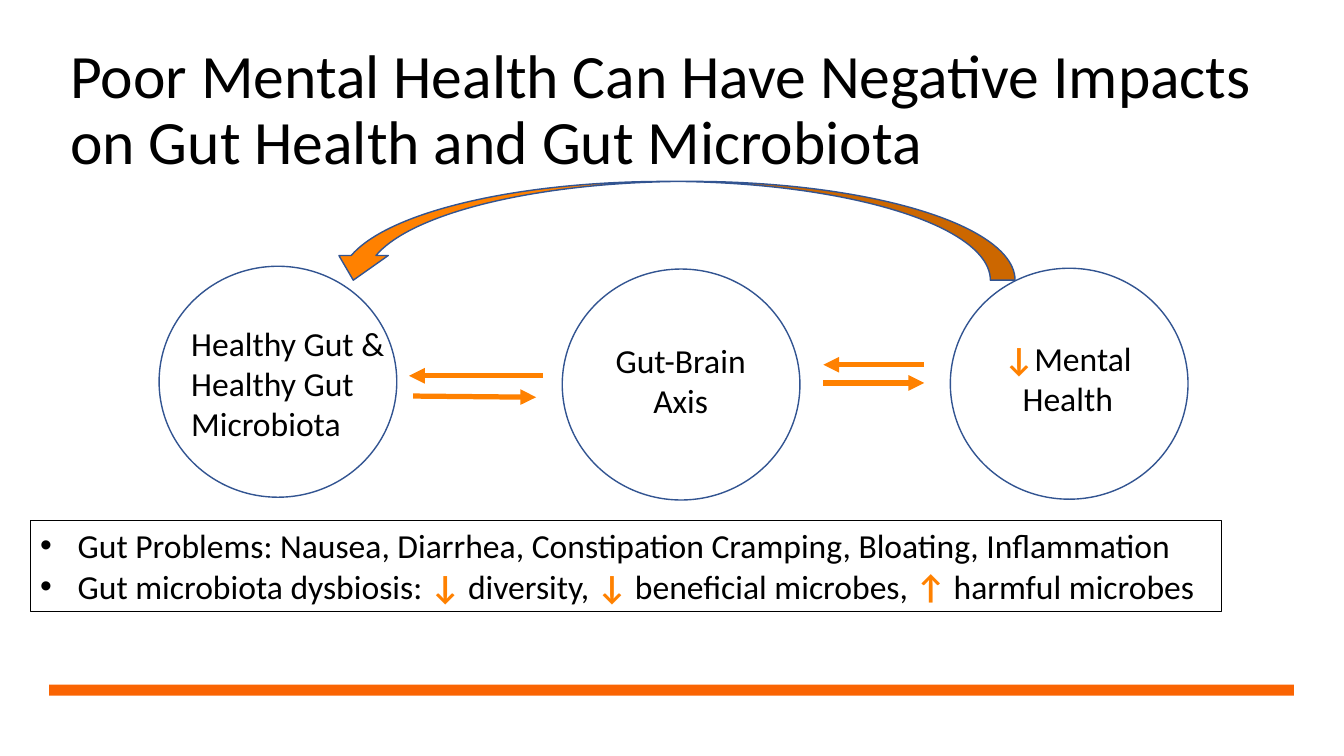
from dataclasses import dataclass

from lxml.etree import SubElement
from pptx import Presentation
from pptx.dml.color import RGBColor
from pptx.enum.shapes import MSO_CONNECTOR as Connector, MSO_SHAPE as Shape
from pptx.enum.text import MSO_ANCHOR as Anchor, PP_ALIGN as Align
from pptx.oxml.ns import qn
from pptx.util import Cm, Pt


@dataclass(frozen=True)
class Theme:
    font: str = "Calibri"
    title_size: float = 44
    body_size: float = 24
    ink: str = "000000"
    accent: str = "FF8100"
    bar: str = "FA6402"
    outline: str = "325491"
    thin: float = 0.75
    normal: float = 1
    thick: float = 3.75


@dataclass(frozen=True)
class Area:
    left: float
    top: float
    width: float
    height: float

    def lengths(self) -> list:
        return [Cm(n) for n in (self.left, self.top, self.width, self.height)]


@dataclass(frozen=True)
class Stage:
    left: float
    top: float
    label: Area
    lines: tuple
    align: Align = Align.CENTER


@dataclass(frozen=True)
class Arrow:
    start: tuple
    end: tuple


THEME = Theme()
CIRCLE_WIDTH, CIRCLE_HEIGHT = 5.99, 5.82
BULLET_INDENT = Cm(0.95)
MARKERS = "↓↑"

STAGES = (
    Stage(23.95, 6.76, Area(24.18, 8.38, 5.46, 2.31), (("↓", "Mental"), ("Health",))),
    Stage(14.17, 6.78, Area(14.88, 8.43, 4.55, 2.31), (("Gut-Brain Axis",),)),
    Stage(4.01, 6.71, Area(4.57, 8, 5.46, 3.33),
          (("Healthy Gut & Healthy Gut Microbiota",),), Align.LEFT),
)
ARROWS = (
    Arrow((20.75, 9.65), (23.29, 9.65)),
    Arrow((23.29, 9.19), (20.75, 9.19)),
    Arrow((10.41, 9.98), (13.51, 10.01)),
    Arrow((13.69, 9.47), (10.31, 9.47)),
)
EFFECTS = (
    ("Gut Problems: Nausea, Diarrhea, Constipation Cramping, Bloating, Inflammation",),
    ("Gut microbiota dysbiosis: ", "↓ ", "diversity,", " ↓",
     " beneficial microbes, ", "↑ ", "harmful microbes"),
)


def add_bullet(para) -> None:
    properties = para._p.get_or_add_pPr()
    properties.set("marL", str(BULLET_INDENT))
    properties.set("indent", str(-BULLET_INDENT))
    SubElement(properties, qn("a:buFont"), typeface="Arial")
    SubElement(properties, qn("a:buChar"), char="•")


def write(box, lines: tuple, *, size: float = THEME.body_size, align: Align = Align.LEFT,
          anchor: Anchor = Anchor.TOP, bullet: bool = False, spacing: float = 1) -> None:
    frame = box.text_frame
    frame.word_wrap = True
    frame.vertical_anchor = anchor
    for index, texts in enumerate(lines):
        para = frame.add_paragraph() if index else frame.paragraphs[0]
        para.alignment = align
        para.line_spacing = spacing
        if bullet:
            add_bullet(para)
        for text in texts:
            marked = text.strip() in MARKERS
            span = para.add_run()
            span.text = text
            span.font.name = THEME.font
            span.font.size = Pt(size)
            span.font.bold = marked
            span.font.color.rgb = RGBColor.from_string(THEME.accent if marked else THEME.ink)


def add_text(page, area: Area, lines: tuple, **style) -> None:
    write(page.shapes.add_textbox(*area.lengths()), lines, **style)


def add_figure(page, kind: Shape, area: Area, *, fill: str = "", line: str = "",
               weight: float = THEME.normal):
    figure = page.shapes.add_shape(kind, *area.lengths())
    figure.shadow.inherit = False
    if fill:
        figure.fill.solid()
        figure.fill.fore_color.rgb = RGBColor.from_string(fill)
    else:
        figure.fill.background()
    if line:
        figure.line.color.rgb = RGBColor.from_string(line)
        figure.line.width = Pt(weight)
    else:
        figure.line.fill.background()
    return figure


def add_arrow(page, arrow: Arrow) -> None:
    ends = [Cm(n) for n in arrow.start + arrow.end]
    connector = page.shapes.add_connector(Connector.STRAIGHT, *ends)
    connector.line.color.rgb = RGBColor.from_string(THEME.accent)
    connector.line.width = Pt(THEME.thick)
    SubElement(connector.line._get_or_add_ln(), qn("a:tailEnd"), type="triangle")
    SubElement(connector._element.spPr, qn("a:effectLst"))


def add_stage(page, stage: Stage) -> None:
    circle = Area(stage.left, stage.top, CIRCLE_WIDTH, CIRCLE_HEIGHT)
    add_figure(page, Shape.OVAL, circle, line=THEME.outline)
    add_text(page, stage.label, stage.lines, align=stage.align)


def main() -> None:
    deck = Presentation()
    deck.slide_width, deck.slide_height = Cm(33.87), Cm(19.05)
    page = deck.slides.add_slide(deck.slide_layouts[6])

    add_figure(page, Shape.RECTANGLE, Area(1.24, 17.25, 31.37, 0.28), fill=THEME.bar)
    effects = add_figure(page, Shape.RECTANGLE, Area(0.76, 13.11, 30.02, 2.31),
                         line=THEME.ink, weight=THEME.thin)
    write(effects, EFFECTS, bullet=True)
    for stage in STAGES:
        add_stage(page, stage)
    for arrow in ARROWS:
        add_arrow(page, arrow)
    feedback = add_figure(page, Shape.CURVED_UP_ARROW, Area(8.28, 4.57, 17.3, 2.49),
                          fill=THEME.accent, line=THEME.outline)
    feedback.rotation = 180
    title = "Poor Mental Health Can Have Negative Impacts on Gut Health and Gut Microbiota"
    add_text(page, Area(1.52, 0.97, 30.81, 3.68), ((title,),), size=THEME.title_size,
             anchor=Anchor.MIDDLE, spacing=0.9)
    deck.save("out.pptx")


if __name__ == "__main__":
    main()
